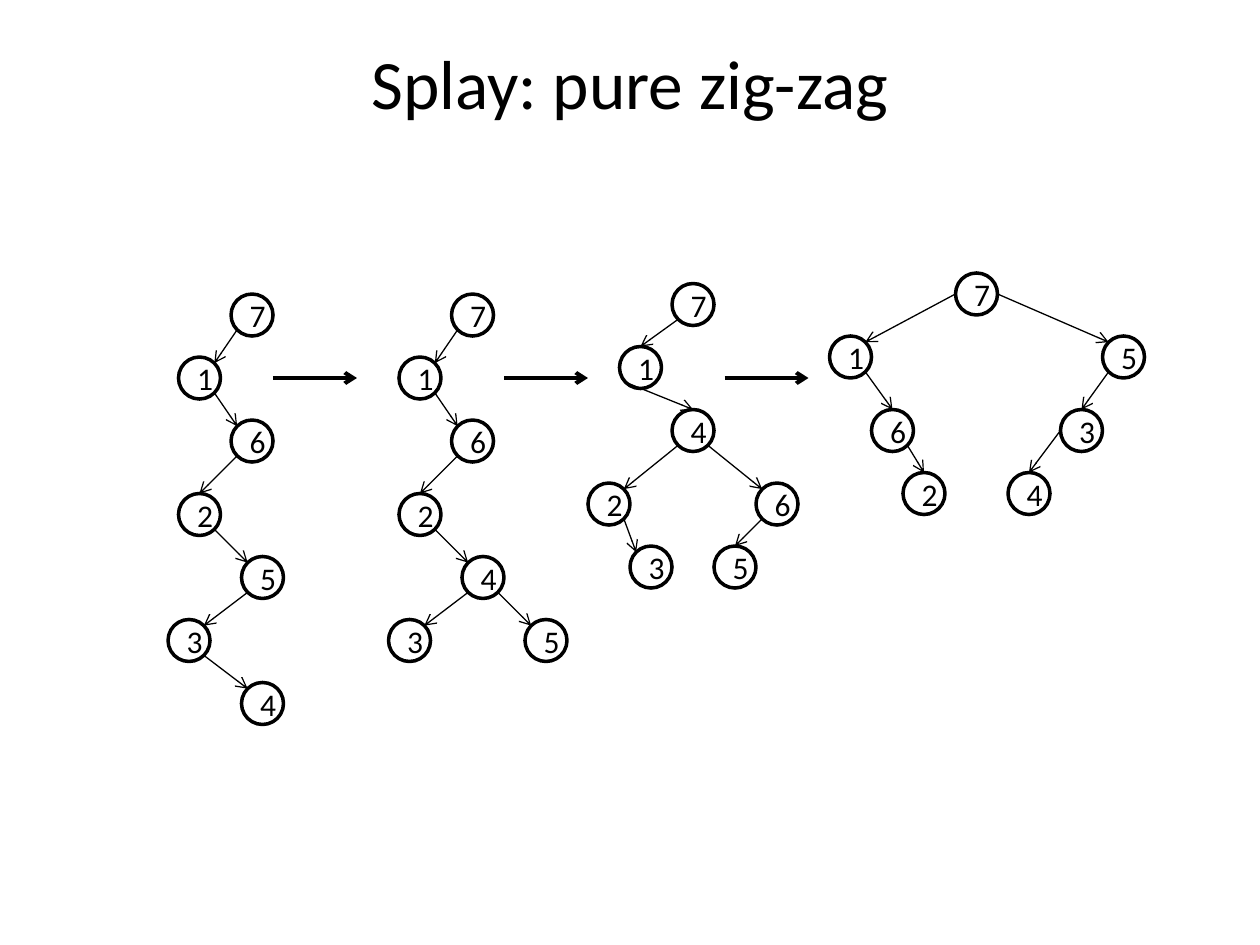
from dataclasses import dataclass
from enum import Enum
from math import sqrt

from lxml import etree
from pptx import Presentation
from pptx import util as u
from pptx.dml.color import RGBColor
from pptx.enum import shapes, text
from pptx.oxml.ns import qn

BLACK, WHITE = "000000", "FFFFFF"
FONT = "Calibri"
GRID = 1 / 12  # inches per grid step
DIAMETER = 4  # grid steps
DIAGONAL = sqrt(0.5)


class Site(Enum):
    """Points on a node's circle, as offsets from its centre in radii."""
    TOP = (0, -1)
    LEFT = (-1, 0)
    RIGHT = (1, 0)
    TOP_LEFT = (-DIAGONAL, -DIAGONAL)
    TOP_RIGHT = (DIAGONAL, -DIAGONAL)
    BOTTOM_LEFT = (-DIAGONAL, DIAGONAL)
    BOTTOM_RIGHT = (DIAGONAL, DIAGONAL)


@dataclass(frozen=True)
class Node:
    key: str
    left: int
    top: int

    def point(self, site: Site) -> tuple[float, float]:
        radius = DIAMETER / 2
        across, down = site.value
        return self.left + radius * (1 + across), self.top + radius * (1 + down)


@dataclass(frozen=True)
class Edge:
    parent: str
    child: str
    start: Site
    end: Site


@dataclass(frozen=True)
class Tree:
    nodes: list[Node]
    edges: list[Edge]


def left_edge(parent: str, child: str, start=Site.BOTTOM_LEFT, end=Site.TOP_RIGHT) -> Edge:
    return Edge(parent, child, start, end)


def right_edge(parent: str, child: str, start=Site.BOTTOM_RIGHT, end=Site.TOP_LEFT) -> Edge:
    return Edge(parent, child, start, end)


def spine(left: int) -> list[Node]:
    """The upper zig-zag shared by the first two trees."""
    return [Node("7", left + 5, 28), Node("1", left, 34),
            Node("6", left + 5, 40), Node("2", left, 47)]


SPINE_EDGES = [left_edge("7", "1"), right_edge("1", "6"), left_edge("6", "2", end=Site.TOP)]

TREES = [
    Tree(spine(17) + [Node("5", 23, 53), Node("3", 16, 59), Node("4", 23, 65)],
         SPINE_EDGES + [right_edge("2", "5"), left_edge("5", "3"), right_edge("3", "4")]),
    Tree(spine(38) + [Node("4", 44, 53), Node("3", 37, 59), Node("5", 50, 59)],
         SPINE_EDGES + [right_edge("2", "4"), left_edge("4", "3"), right_edge("4", "5")]),
    Tree([Node("7", 64, 27), Node("1", 59, 33), Node("4", 64, 39), Node("2", 56, 46),
          Node("3", 60, 52), Node("6", 72, 46), Node("5", 68, 52)],
         [left_edge("7", "1", end=Site.TOP),
          right_edge("1", "4", start=Site.BOTTOM_LEFT, end=Site.TOP),
          left_edge("4", "2"), right_edge("2", "3"), right_edge("4", "6"),
          left_edge("6", "5", end=Site.TOP)]),
    Tree([Node("7", 91, 26), Node("1", 79, 32), Node("6", 83, 39), Node("2", 86, 45),
          Node("5", 105, 32), Node("3", 101, 39), Node("4", 96, 45)],
         [left_edge("7", "1", start=Site.LEFT), right_edge("1", "6", end=Site.TOP),
          right_edge("6", "2", end=Site.TOP), right_edge("7", "5", start=Site.RIGHT),
          left_edge("5", "3", end=Site.TOP),
          left_edge("3", "4", start=Site.LEFT, end=Site.TOP)]),
]
STEP_LEFTS, STEP_TOP, STEP_LENGTH = (26, 48, 69), 36, 8


def color(value: str) -> RGBColor:
    return RGBColor.from_string(value)


def steps(count: float) -> u.Length:
    return u.Inches(count * GRID)


def format_text(text_frame, size: float) -> None:
    text_frame.vertical_anchor = text.MSO_ANCHOR.MIDDLE
    for paragraph in text_frame.paragraphs:
        paragraph.alignment = text.PP_ALIGN.CENTER
        for run in paragraph.runs:
            run.font.name = FONT
            run.font.size = u.Pt(size)
            run.font.color.rgb = color(BLACK)


def draw_node(slide, node: Node) -> None:
    shape = slide.shapes.add_shape(shapes.MSO_SHAPE.OVAL, steps(node.left), steps(node.top),
                                   steps(DIAMETER), steps(DIAMETER))
    shape.shadow.inherit = False
    shape.fill.solid()
    shape.fill.fore_color.rgb = color(WHITE)
    shape.line.color.rgb = color(BLACK)
    shape.line.width = u.Pt(2)
    shape.text_frame.text = node.key
    format_text(shape.text_frame, 18)


def draw_arrow(slide, start: tuple[float, float], end: tuple[float, float], width: float) -> None:
    connector = slide.shapes.add_connector(shapes.MSO_CONNECTOR.STRAIGHT,
                                           *map(steps, start), *map(steps, end))
    connector.line.color.rgb = color(BLACK)
    connector.line.width = u.Pt(width)
    properties = connector.element.spPr
    etree.SubElement(properties.find(qn("a:ln")), qn("a:tailEnd"), type="arrow")
    etree.SubElement(properties, qn("a:effectLst"))


def draw_tree(slide, tree: Tree) -> None:
    by_key = {node.key: node for node in tree.nodes}
    for node in tree.nodes:
        draw_node(slide, node)
    for edge in tree.edges:
        draw_arrow(slide, by_key[edge.parent].point(edge.start),
                   by_key[edge.child].point(edge.end), 0.75)


def main() -> None:
    presentation = Presentation()
    presentation.slide_width, presentation.slide_height = u.Inches(10), u.Inches(7.5)
    slide = presentation.slides.add_slide(presentation.slide_layouts[5])

    # Title
    title = slide.shapes.title
    title.left, title.top = u.Inches(0.5), u.Inches(0.3)
    title.width, title.height = u.Inches(9), u.Inches(0.7)
    title.text_frame.text = "Splay: pure zig-zag"
    format_text(title.text_frame, 39.6)

    # Trees
    for tree in TREES:
        draw_tree(slide, tree)

    # Arrows from one splay step to the next
    for left in STEP_LEFTS:
        draw_arrow(slide, (left, STEP_TOP), (left + STEP_LENGTH, STEP_TOP), 2.25)

    presentation.save("out.pptx")


if __name__ == "__main__":
    main()
